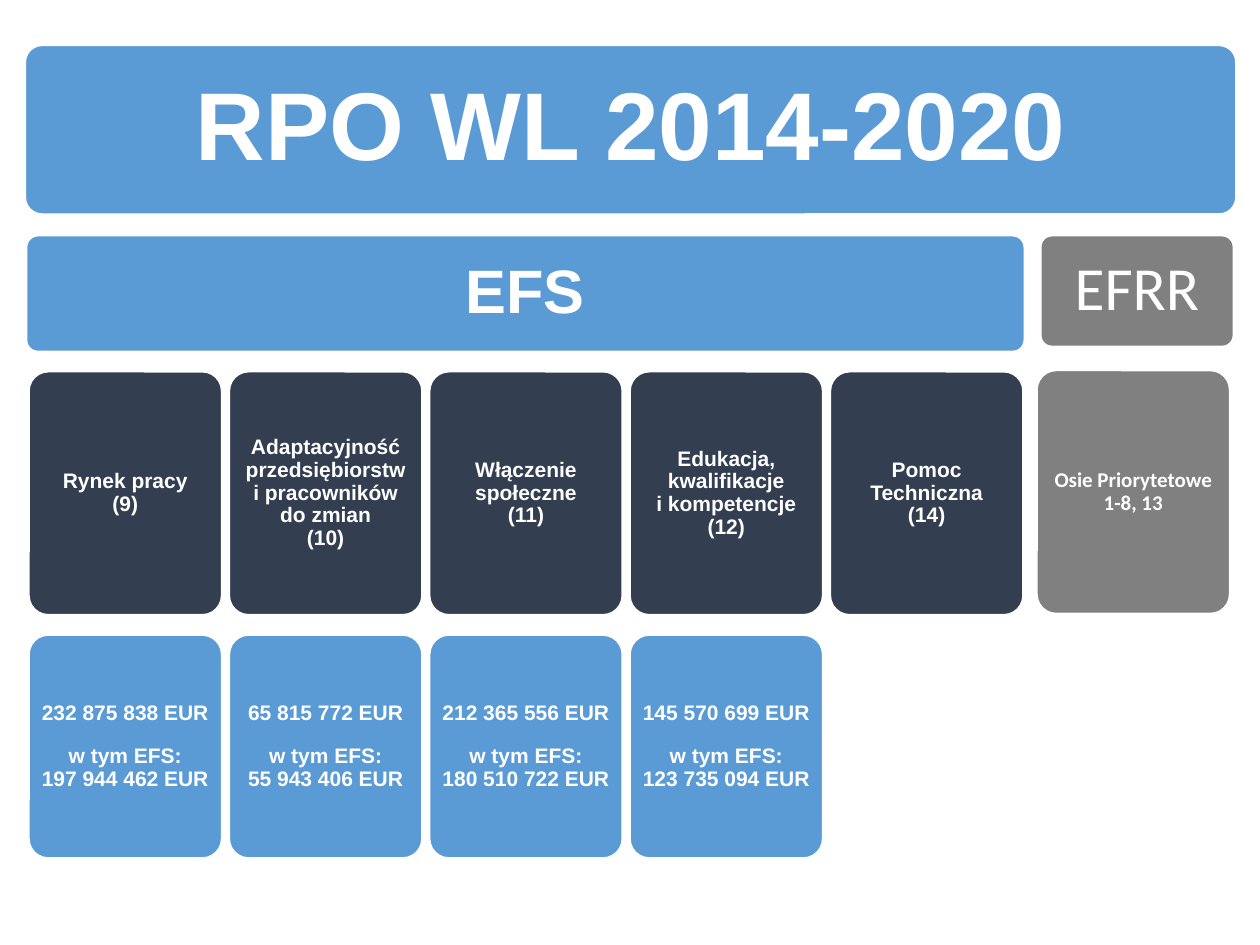
from dataclasses import dataclass

from pptx import Presentation
from pptx import util as u
from pptx.dml.color import RGBColor
from pptx.enum import shapes, text


@dataclass(frozen=True)
class Theme:
    blue: str = "5B9BD5"
    navy: str = "333F50"
    grey: str = "808080"
    white: str = "FFFFFF"
    font: str = "Arial"
    alt_font: str = "Calibri"
    title: int = 55
    heading: int = 35
    body: int = 12


class Board:
    def __init__(self, s, theme):
        self.s = s
        self.theme = theme

    def label(self, sp, words, size, margin, font=None, bold=True):
        """Centre words in sp; a newline starts a paragraph, \\v breaks a line."""
        tf = sp.text_frame
        tf.text = words
        tf.word_wrap = True
        tf.auto_size = text.MSO_AUTO_SIZE.NONE
        tf.vertical_anchor = text.MSO_ANCHOR.MIDDLE
        tf.margin_left = tf.margin_right = u.Inches(margin)
        tf.margin_top = tf.margin_bottom = u.Inches(margin)
        for i, p in enumerate(tf.paragraphs):
            p.alignment = text.PP_ALIGN.CENTER
            p.line_spacing = 0.9
            p.space_before = u.Pt(size if i else 0)
            for r in p.runs:
                r.font.name = font or self.theme.font
                r.font.size = u.Pt(size)
                r.font.bold = bold
                r.font.color.rgb = RGBColor.from_string(self.theme.white)

    def box(self, at, color):
        sp = self.s.shapes.add_shape(
            shapes.MSO_SHAPE.ROUNDED_RECTANGLE, *map(u.Inches, at))
        sp.adjustments[0] = 0.1
        sp.shadow.inherit = False
        sp.fill.solid()
        sp.fill.fore_color.rgb = RGBColor.from_string(color)
        sp.line.color.rgb = RGBColor.from_string(self.theme.white)
        sp.line.width = u.Pt(1)
        return sp

    def heading(self, at, color, words, **style):
        self.label(self.box(at, color), words, self.theme.heading, 0.15, **style)

    def card(self, at, color, words, **style):
        self.label(self.box(at, color), words, self.theme.body, 0.05, **style)

    def title(self, at, words):
        self.box(at, self.theme.blue)
        sp = self.s.shapes.title
        self.s.shapes.element.append(sp.element)  # bring in front of the banner
        sp.left, sp.top, sp.width, sp.height = map(u.Inches, at)
        self.label(sp, words, self.theme.title, 0.27)


AXES = [
    ("Rynek pracy\v(9)", "232 875 838", "197 944 462"),
    ("Adaptacyjność przedsiębiorstw i pracowników do zmian\v(10)",
     "65 815 772", "55 943 406"),
    ("Włączenie społeczne\v(11)", "212 365 556", "180 510 722"),
    ("Edukacja, kwalifikacje\vi kompetencje (12)", "145 570 699", "123 735 094"),
    ("Pomoc Techniczna\v(14)", None, None),
]
LEFT, PITCH, CARD_W = 0.23, 1.59, 1.53


def main():
    prs = Presentation()
    prs.slide_width, prs.slide_height = u.Inches(10), u.Inches(7.5)
    theme = Theme()
    board = Board(prs.slides.add_slide(prs.slide_layouts[5]), theme)

    board.title((0.2, 0.36, 9.61, 1.34), "RPO WL 2014-2020")
    board.heading((0.21, 1.87, 7.92, 0.92), theme.blue, "EFS")
    for i, (name, total, efs) in enumerate(AXES):
        x = LEFT + i * PITCH
        board.card((x, 2.95, CARD_W, 1.93), theme.navy, name)
        if total:
            board.card((x, 5.04, CARD_W, 1.77), theme.blue,
                       f"{total} EUR\nw tym EFS:\v{efs} EUR")

    board.heading((8.26, 1.87, CARD_W, 0.88), theme.grey, "EFRR",
                  font=theme.alt_font, bold=False)
    board.card((8.23, 2.94, CARD_W, 1.93), theme.grey,
               "Osie Priorytetowe 1-8, 13", font=theme.alt_font)
    prs.save("out.pptx")


if __name__ == "__main__":
    main()
